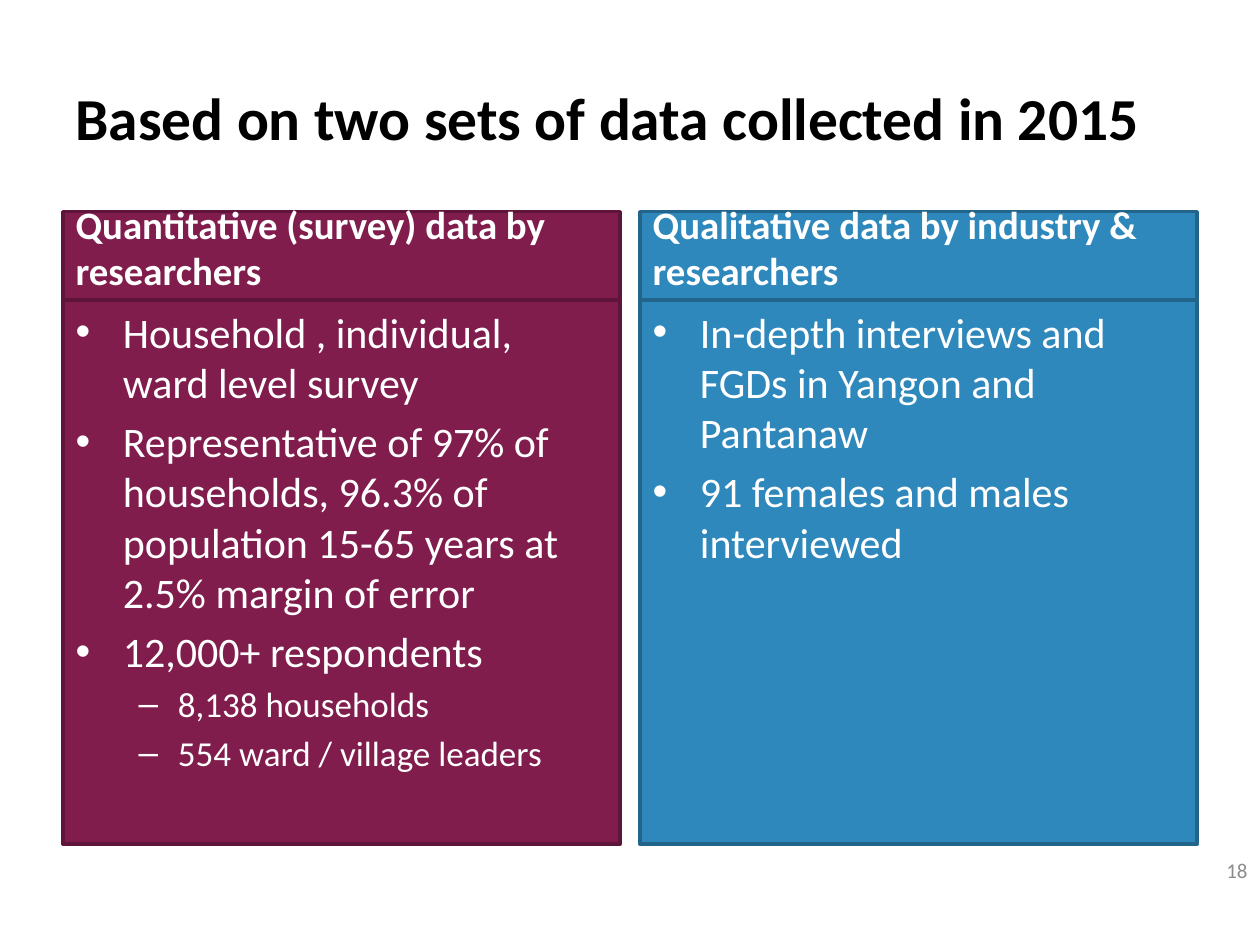
from pptx import Presentation
from pptx.dml.color import RGBColor
from pptx.enum.text import MSO_ANCHOR, MSO_AUTO_SIZE, PP_ALIGN
from pptx.util import Inches, Pt

LEFT, RIGHT = PP_ALIGN.LEFT, PP_ALIGN.RIGHT
MIDDLE, BOTTOM, TOP = MSO_ANCHOR.MIDDLE, MSO_ANCHOR.BOTTOM, MSO_ANCHOR.TOP
NO_AUTOFIT = MSO_AUTO_SIZE.NONE
COMPARISON_LAYOUT = 3 + 1

TITLE = "Based on two sets of data collected in 2015"
PAGE_NUMBER = "18"
# Each bullet is (level, text)
COLUMNS = [
    {
        "heading": "Quantitative (survey) data by researchers",
        "bullets": [
            (0, "Household , individual, ward level survey"),
            (0, "Representative of 97% of households, 96.3% of population "
                "15-65 years at 2.5% margin of error"),
            (0, "12,000+ respondents"),
            (1, "8,138 households"),
            (1, "554 ward / village leaders"),
        ],
        "fill": "801D4D",
        "line": "5F1539",
    },
    {
        "heading": "Qualitative data by industry & researchers",
        "bullets": [
            (0, "In-depth interviews and FGDs in Yangon and Pantanaw"),
            (0, "91 females and males interviewed"),
        ],
        "fill": "2F88BB",
        "line": "23658A",
    },
]

THEME = {
    "font": "Calibri",
    "title_color": "000000",
    "panel_text": "FFFFFF",
    "number_color": "8C8C8C",
    "title_size": 34,
    "heading_size": 22.2,
    "bullet_sizes": (24, 20),
    "number_size": 12,
    "line_width": 2,
}

SLIDE_WIDTH, SLIDE_HEIGHT = 10, 7.5
MARGIN, GAP = 0.5, 0.16
COLUMN_WIDTH = (SLIDE_WIDTH - 2 * MARGIN - GAP) / 2
HEADING_TOP, HEADING_HEIGHT = 1.68, 0.7
LIST_TOP, LIST_HEIGHT = HEADING_TOP + HEADING_HEIGHT, 4.32


def place(shape, left, top, width, height):
    shape.left, shape.top = Inches(left), Inches(top)
    shape.width, shape.height = Inches(width), Inches(height)


def write(shape, items, sizes, color, anchor, bold=False, align=LEFT):
    """Fill a shape with (level, text) paragraphs, sized by level."""
    frame = shape.text_frame
    frame.text = "\n".join(text for _, text in items)
    frame.word_wrap = True
    frame.auto_size = NO_AUTOFIT
    frame.vertical_anchor = anchor
    for paragraph, (level, _) in zip(frame.paragraphs, items):
        paragraph.level = level
        paragraph.alignment = align
        for run in paragraph.runs:
            run.font.name = THEME["font"]
            run.font.size = Pt(sizes[level])
            run.font.bold = bold
            run.font.color.rgb = RGBColor.from_string(color)


def paint(shape, column):
    shape.fill.solid()
    shape.fill.fore_color.rgb = RGBColor.from_string(column["fill"])
    shape.line.color.rgb = RGBColor.from_string(column["line"])
    shape.line.width = Pt(THEME["line_width"])


def add_column(slide, index, column):
    left = MARGIN + index * (COLUMN_WIDTH + GAP)
    heading = slide.placeholders[1 + 2 * index]
    bullet_list = slide.placeholders[2 + 2 * index]
    place(heading, left, HEADING_TOP, COLUMN_WIDTH, HEADING_HEIGHT)
    place(bullet_list, left, LIST_TOP, COLUMN_WIDTH, LIST_HEIGHT)
    paint(heading, column)
    paint(bullet_list, column)
    write(heading, [(0, column["heading"])], [THEME["heading_size"]],
          THEME["panel_text"], BOTTOM, bold=True)
    write(bullet_list, column["bullets"], THEME["bullet_sizes"],
          THEME["panel_text"], TOP)


def main():
    presentation = Presentation()
    presentation.slide_width = Inches(SLIDE_WIDTH)
    presentation.slide_height = Inches(SLIDE_HEIGHT)
    slide = presentation.slides.add_slide(
        presentation.slide_layouts[COMPARISON_LAYOUT])

    title = slide.shapes.title
    place(title, MARGIN, 0.3, SLIDE_WIDTH - 2 * MARGIN, 1.25)
    write(title, [(0, TITLE)], [THEME["title_size"]],
          THEME["title_color"], MIDDLE, bold=True)

    for index, column in enumerate(COLUMNS):
        add_column(slide, index, column)

    number = slide.shapes.add_textbox(
        Inches(9.5), Inches(6.71), Inches(0.5), Inches(0.4))
    write(number, [(0, PAGE_NUMBER)], [THEME["number_size"]],
          THEME["number_color"], MIDDLE, align=RIGHT)

    presentation.save("out.pptx")


if __name__ == "__main__":
    main()
